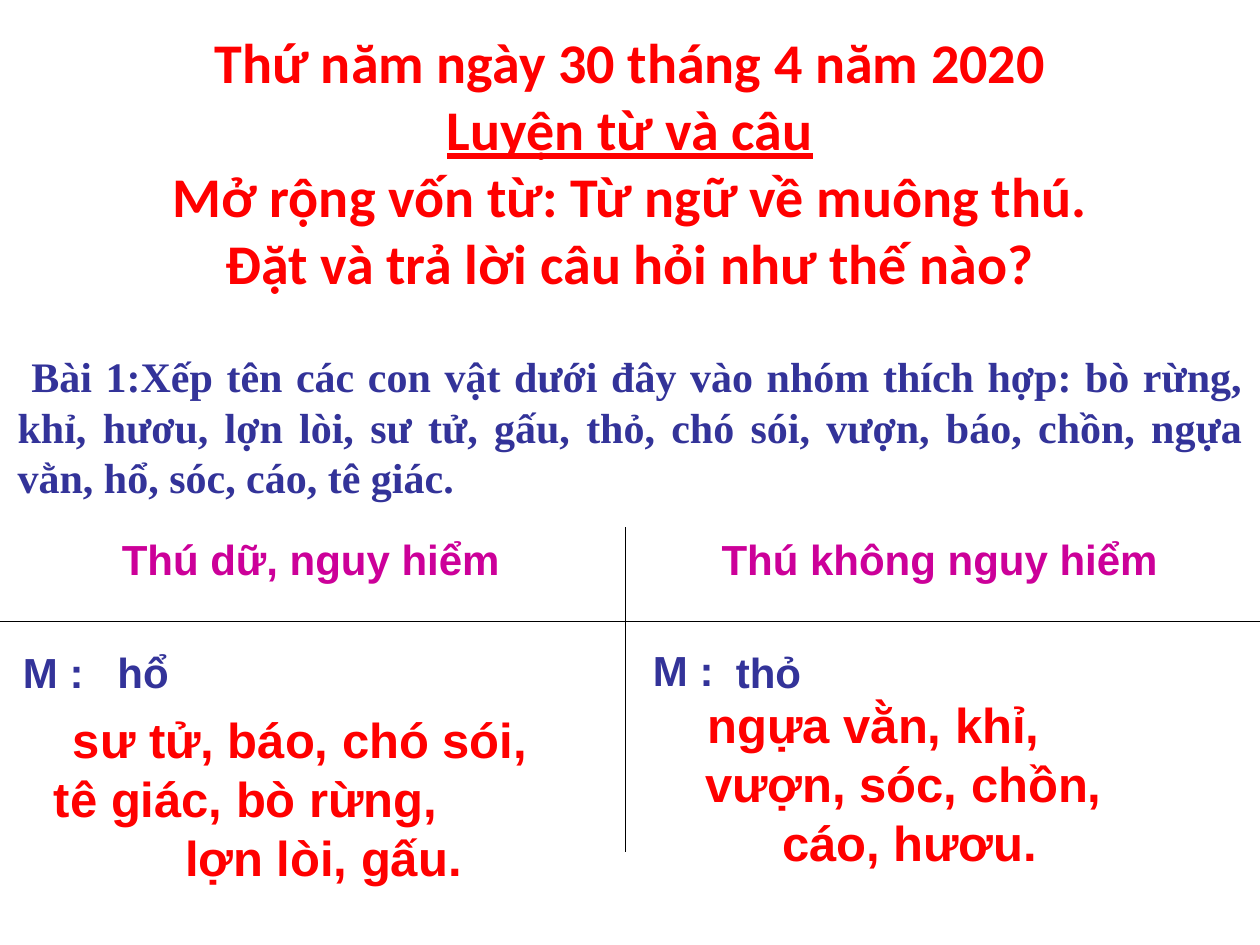
"""Build a Vietnamese vocabulary slide that sorts animals into two groups."""
from lxml import etree
from pptx import Presentation
from pptx.dml.color import RGBColor
from pptx.enum.shapes import MSO_CONNECTOR
from pptx.enum.text import MSO_ANCHOR, MSO_AUTO_SIZE, PP_ALIGN
from pptx.oxml.ns import qn
from pptx.util import Inches, Pt

LEFT, MID, FULL = PP_ALIGN.LEFT, PP_ALIGN.CENTER, PP_ALIGN.JUSTIFY
TOP, FIXED = MSO_ANCHOR.TOP, MSO_AUTO_SIZE.NONE
LINE = MSO_CONNECTOR.STRAIGHT
RED = RGBColor(0xFF, 0x00, 0x00)
BLUE = RGBColor(0x33, 0x33, 0x99)
PINK = RGBColor(0xCC, 0x00, 0x99)
BLACK = RGBColor(0x00, 0x00, 0x00)

deck = Presentation()
deck.slide_width, deck.slide_height = Inches(10), Inches(7.5)
COL, ROW = deck.slide_width / 120, deck.slide_height / 90
slide = deck.slides.add_slide(deck.slide_layouts[5])


def place(shape, x, y, wide, high):
    shape.left, shape.top = int(x * COL), int(y * ROW)
    shape.width, shape.height = int(wide * COL), int(high * ROW)
    frame = shape.text_frame
    frame.word_wrap, frame.auto_size = True, FIXED
    frame.vertical_anchor = TOP
    return frame


def write(frame, lines, size, face, color, align):
    frame.text = "\n".join(lines)
    for para in frame.paragraphs:
        para.alignment = align
        font = para.font
        font.size, font.name, font.bold = Pt(size), face, True
        font.color.rgb = color


title = place(slide.shapes.title, 0, 2, 120, 27)
write(title, ["Thứ năm ngày 30 tháng 4 năm 2020", "Luyện từ và câu",
              "Mở rộng vốn từ: Từ ngữ về muông thú.",
              "Đặt và trả lời câu hỏi như thế nào?"], 32, "Calibri", RED, MID)
title.paragraphs[1].font.underline = True

task = place(slide.shapes.add_textbox(0, 0, 0, 0), 0.5, 32.8, 119, 16)
write(task, ["Bài 1:Xếp tên các con vật dưới đây vào nhóm thích hợp: bò rừng, "
             "khỉ, hươu, lợn lòi, sư tử, gấu, thỏ, chó sói, vượn, báo, chồn, "
             "ngựa vằn, hổ, sóc, cáo, tê giác."],
      24, "Times New Roman", BLUE, FULL)
task.paragraphs[0]._p.get_or_add_pPr().set("indent", str(Inches(0.11)))

labels = [
    ("Thú dữ, nguy hiểm", 6.6, 50.2, 46, PINK, MID),
    ("Thú không nguy hiểm", 65, 50.2, 49, PINK, MID),
    ("M :", 1, 61, 9, BLUE, LEFT),
    ("hổ", 10, 61, 10, BLUE, LEFT),
    ("M :", 61, 60.8, 10, BLUE, LEFT),
    ("thỏ", 68.9, 61, 10, BLUE, LEFT),
]
for text, x, y, wide, color, align in labels:
    box = place(slide.shapes.add_textbox(0, 0, 0, 0), x, y, wide, 6)
    write(box, [text], 24, "Arial", color, align)

for x, y, far, low in [(59.6, 50.2, 59.6, 81.1), (0, 59.2, 120, 59.2)]:
    rule = slide.shapes.add_connector(
        LINE, int(x * COL), int(y * ROW), int(far * COL), int(low * ROW))
    rule.line.color.rgb, rule.line.width = BLACK, Pt(0.75)
    etree.SubElement(rule._element.spPr, qn("a:effectLst"))

groups = [
    (0, 67, 57, 18, [("sư tử, báo, chó sói,", 0.48),
                     ("tê giác, bò rừng,", 0.33), ("lợn lòi, gấu.", 1.37)]),
    (59.5, 65.6, 50, 24, [("ngựa vằn, khỉ,", 0.56),
                          ("vượn, sóc, chồn,", 0.54), ("cáo, hươu.", 1.15)]),
]
for x, y, wide, high, rows in groups:
    box = place(slide.shapes.add_textbox(0, 0, 0, 0), x, y, wide, high)
    write(box, [text for text, inset in rows], 28, "Arial", RED, LEFT)
    for para, (text, inset) in zip(box.paragraphs, rows):
        para._p.get_or_add_pPr().set("marL", str(Inches(inset)))

deck.save("out.pptx")
